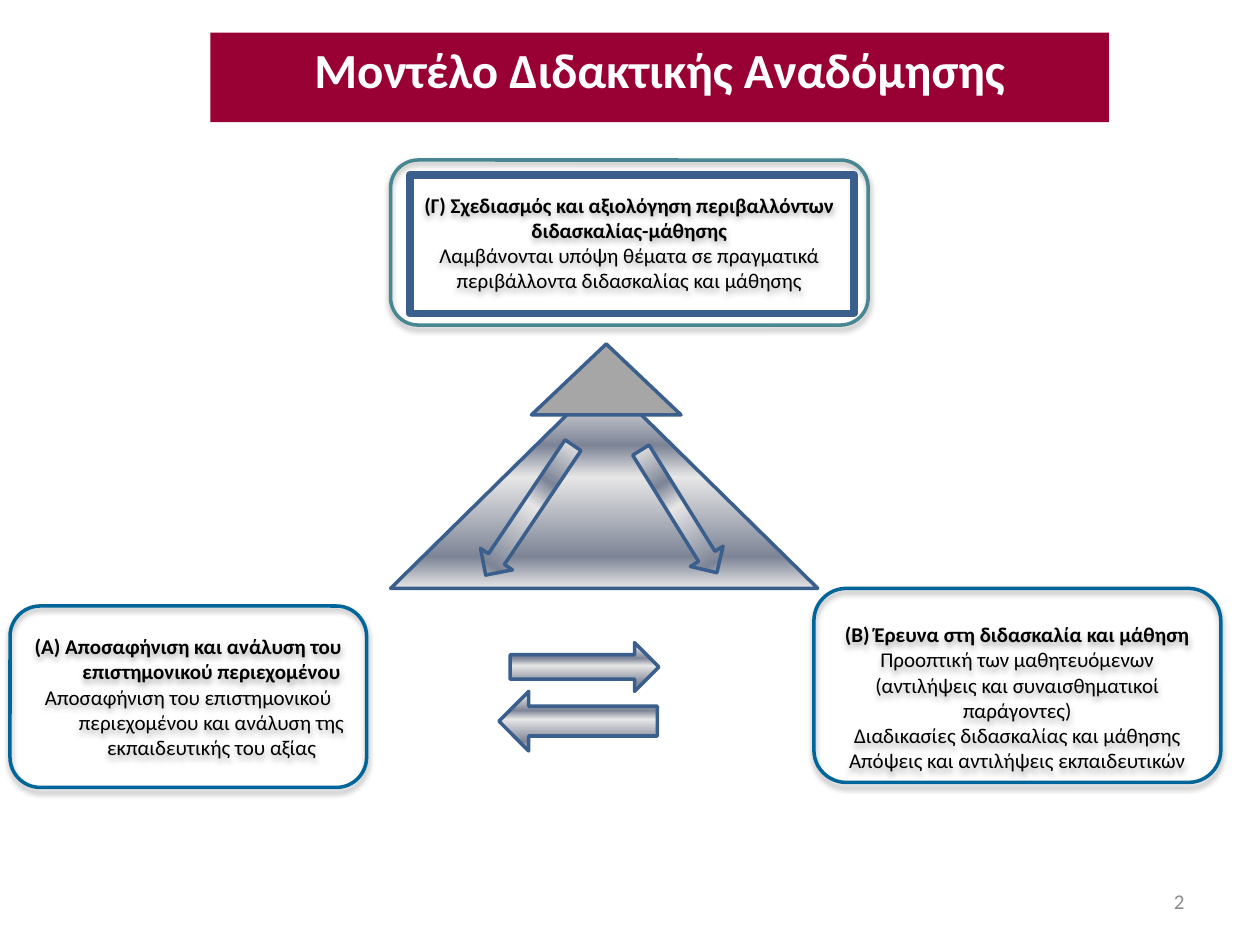
from dataclasses import dataclass

from lxml.etree import SubElement
from pptx import Presentation
from pptx.dml.color import RGBColor
from pptx.enum.shapes import MSO_SHAPE as Preset
from pptx.enum.text import MSO_ANCHOR as Anchor, MSO_AUTO_SIZE as AutoSize, PP_ALIGN as Align
from pptx.oxml.ns import qn
from pptx.util import Inches, Pt

STEEL, OCEAN, TEAL = "3A5F8C", "006699", "488692"
METAL = [(0, "808080"), (7, "E6E6E6"), (32, "7D8496"),
         (47, "E6E6E6"), (85, "7D8496"), (100, "E6E6E6")]


@dataclass
class Box:
    """A region of the slide in inches."""
    left: float
    top: float
    width: float
    height: float

    def share(self, x, y, w, h):
        """Return a box inside this one, given in shares of its size."""
        return Box(self.left + x * self.width, self.top + y * self.height,
                   w * self.width, h * self.height)

    def emu(self):
        """Return left, top, width and height as slide lengths."""
        return [Inches(v) for v in (self.left, self.top, self.width, self.height)]


def colour(value):
    """Turn a hex string into a colour."""
    return RGBColor.from_string(value)


def apply(target, formats):
    """Set each named format value on the target."""
    for name, value in formats.items():
        setattr(target, name, value)


def add_preset(shapes, preset, box, line, weight=2, fill=None):
    """Add an outlined preset shape, unfilled unless a colour is given."""
    shape = shapes.add_shape(preset, *box.emu())
    shape.shadow.inherit = False
    shape.line.color.rgb = colour(line)
    shape.line.width = Pt(weight)
    if fill:
        shape.fill.solid()
        shape.fill.fore_color.rgb = colour(fill)
    else:
        shape.fill.background()
    return shape


def add_metal(shapes, preset, box, rotation=0):
    """Add a preset shape with the banded metal gradient."""
    shape = add_preset(shapes, preset, box, STEEL)
    shape.rotation = rotation
    shape.fill.gradient()
    shape.fill.gradient_angle = 270
    stops = shape._element.spPr.find(qn("a:gradFill")).find(qn("a:gsLst"))
    for stop in list(stops):
        stops.remove(stop)
    for percent, shade in METAL:
        stop = SubElement(stops, qn("a:gs"), pos=str(percent * 1000))
        SubElement(stop, qn("a:srgbClr"), val=shade)


def cast_shadow(shape):
    """Give a shape a soft shadow below it."""
    effects = shape._element.spPr.find(qn("a:effectLst"))
    shadow = SubElement(effects, qn("a:outerShdw"), blurRad=str(Pt(3.5)),
                        dist=str(Pt(2.2)), dir="5400000", rotWithShape="0")
    shade = SubElement(shadow, qn("a:srgbClr"), val="000000")
    SubElement(shade, qn("a:alpha"), val="32000")


def write(paragraph, text, align, **formats):
    """Fill a paragraph with one formatted run."""
    paragraph.alignment = align
    run = paragraph.add_run()
    run.text = text
    run.font.color.rgb = colour(formats.pop("shade"))
    apply(run.font, {"name": "Calibri", **formats})


def add_component(shapes, box, line, heading, details, anchor=Anchor.MIDDLE, hanging=0):
    """Add a rounded model component with a bold heading and details."""
    component = add_preset(shapes, Preset.ROUNDED_RECTANGLE, box, line)
    cast_shadow(component)
    frame = component.text_frame
    apply(frame, {"word_wrap": True, "vertical_anchor": anchor})
    if anchor == Anchor.BOTTOM:
        frame.margin_bottom = 0
    for index, text in enumerate([heading, *details]):
        paragraph = frame.add_paragraph() if index else frame.paragraphs[0]
        if hanging:
            properties = paragraph._p.get_or_add_pPr()
            properties.set("marL", str(Inches(hanging)))
            properties.set("indent", str(-Inches(hanging)))
        write(paragraph, text, Align.CENTER, size=Pt(12), bold=index == 0, shade="000000")


def add_banner(slide, box):
    """Place the title on its crimson banner."""
    title = slide.shapes.title
    apply(title, dict(zip(("left", "top", "width", "height"), box.emu())))
    title.fill.solid()
    title.fill.fore_color.rgb = colour("990033")
    apply(title.text_frame, {"word_wrap": True, "auto_size": AutoSize.NONE,
                             "vertical_anchor": Anchor.TOP})
    write(title.text_frame.paragraphs[0], "Μοντέλο Διδακτικής Αναδόμησης",
          Align.CENTER, size=Pt(28), bold=True, shade="FFFFFF")


def add_pyramid(slide, box):
    """Group the triangle, its tip and the two descending arrows."""
    shapes = slide.shapes.add_group_shape().shapes
    add_metal(shapes, Preset.ISOSCELES_TRIANGLE, box.share(0, 0.14, 1, 0.86))
    add_preset(shapes, Preset.ISOSCELES_TRIANGLE, box.share(0.33, 0, 0.35, 0.29),
               STEEL, fill="A6A6A6")
    add_metal(shapes, Preset.DOWN_ARROW, box.share(0.63, 0.39, 0.09, 0.59), 328.2)
    add_metal(shapes, Preset.DOWN_ARROW, box.share(0.28, 0.36, 0.09, 0.64), 33.9)


def add_exchange(slide, box):
    """Place the pair of opposite arrows."""
    add_metal(slide.shapes, Preset.RIGHT_ARROW, box.share(0.07, 0, 0.93, 0.45))
    add_metal(slide.shapes, Preset.LEFT_ARROW, box.share(0, 0.45, 0.99, 0.55))


def add_design(slide, box):
    """Place the design component with its inner frame."""
    add_component(
        slide.shapes, box, TEAL,
        "(Γ) Σχεδιασμός και αξιολόγηση περιβαλλόντων διδασκαλίας-μάθησης",
        ["Λαμβάνονται υπόψη θέματα σε πραγματικά περιβάλλοντα διδασκαλίας και μάθησης"])
    add_preset(slide.shapes, Preset.RECTANGLE, box.share(0.04, 0.09, 0.93, 0.84), STEEL, 4.5)


def add_page_number(slide, box):
    """Place the page number at the lower right."""
    frame = slide.shapes.add_textbox(*box.emu()).text_frame
    apply(frame, {"word_wrap": True, "vertical_anchor": Anchor.MIDDLE})
    write(frame.paragraphs[0], "2", Align.RIGHT, size=Pt(12), shade="8C8C8C")


def main():
    """Build the slide and save it."""
    deck = Presentation()
    deck.slide_width, deck.slide_height = Inches(10), Inches(7.5)
    slide = deck.slides.add_slide(deck.slide_layouts[5])
    add_banner(slide, Box(1.67, 0.26, 7.13, 0.71))
    add_pyramid(slide, Box(3.1, 2.73, 3.39, 1.94))
    add_component(
        slide.shapes, Box(0.08, 4.81, 2.83, 1.44), OCEAN,
        "(Α) Αποσαφήνιση και ανάλυση του επιστημονικού περιεχομένου",
        ["Αποσαφήνιση του επιστημονικού περιεχομένου και ανάλυση της εκπαιδευτικής του αξίας"],
        hanging=0.37)
    add_component(
        slide.shapes, Box(6.46, 4.67, 3.23, 1.54), OCEAN,
        "(Β) Έρευνα στη διδασκαλία και μάθηση",
        ["Προοπτική των μαθητευόμενων",
         "(αντιλήψεις και συναισθηματικοί παράγοντες)",
         "Διαδικασίες διδασκαλίας και μάθησης",
         "Απόψεις και αντιλήψεις εκπαιδευτικών"],
        anchor=Anchor.BOTTOM)
    add_design(slide, Box(3.1, 1.27, 3.79, 1.31))
    add_exchange(slide, Box(3.96, 5.1, 1.27, 0.86))
    add_page_number(slide, Box(7.17, 6.95, 2.33, 0.4))
    deck.save("out.pptx")


if __name__ == "__main__":
    main()
